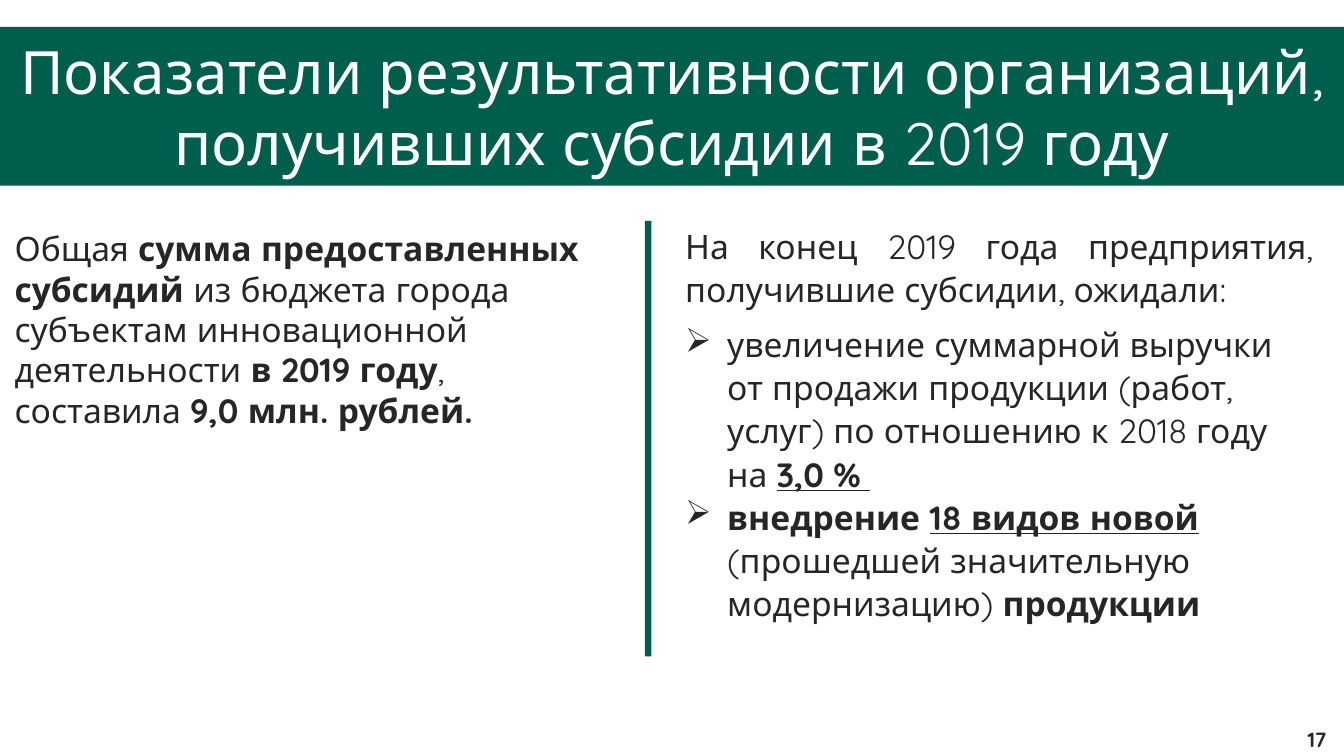
from pptx import Presentation
from pptx.dml.color import RGBColor
from pptx.enum.shapes import MSO_SHAPE
from pptx.enum.text import MSO_ANCHOR, PP_ALIGN
from pptx.oxml.ns import qn
from pptx.util import Pt
from lxml import etree

GREEN = RGBColor(0x00, 0x5E, 0x4C)
WHITE = RGBColor(0xFF, 0xFF, 0xFF)
DARK = RGBColor(0x26, 0x26, 0x26)
FONT = "Quicksand"
RECTANGLE = MSO_SHAPE.RECTANGLE
MIDDLE = MSO_ANCHOR.MIDDLE
LEFT, CENTER, JUSTIFY = PP_ALIGN.LEFT, PP_ALIGN.CENTER, PP_ALIGN.JUSTIFY
BULLET = "➢"
BULLET_INDENT = Pt(22.5)


def add_bar(page, left, top, width, height):
    bar = page.shapes.add_shape(RECTANGLE, Pt(left), Pt(top), Pt(width), Pt(height))
    bar.shadow.inherit = False
    bar.fill.solid()
    bar.fill.fore_color.rgb = GREEN
    bar.line.fill.background()
    return bar


def add_box(page, left, top, width, height, wrap=True):
    box = page.shapes.add_textbox(Pt(left), Pt(top), Pt(width), Pt(height))
    box.text_frame.word_wrap = wrap
    return box.text_frame


def add_span(para, text, size=18, color=DARK, bold=False, underline=False):
    span = para.add_run()
    span.text = text
    font = span.font
    font.name, font.size, font.color.rgb = FONT, Pt(size), color
    font.bold, font.underline = bold, underline


def format_para(para, align=LEFT, spacing=None, after=None):
    para.alignment = align
    para.line_spacing = spacing
    if after is not None:
        para.space_after = Pt(after)
    return para


def add_bullet(para):
    properties = para._p.get_or_add_pPr()
    properties.set("marL", str(BULLET_INDENT))
    properties.set("indent", str(-BULLET_INDENT))
    etree.SubElement(properties, qn("a:buChar")).set("char", BULLET)


def main():
    deck = Presentation()
    deck.slide_width, deck.slide_height = Pt(720), Pt(405)
    page = deck.slides.add_slide(deck.slide_layouts[6])

    # Title band
    band = add_bar(page, 0, 14.4, 720, 85).text_frame
    band.word_wrap = True
    band.vertical_anchor = MIDDLE
    title = format_para(band.paragraphs[0], align=CENTER)
    add_span(title, "Показатели результативности организаций, получивших субсидии в 2019 году",
             size=32, color=WHITE)

    # Left column: total of the subsidies
    total = add_box(page, 0.7, 118.8, 324.7, 116.6).paragraphs[0]
    for text, bold in (
        ("Общая ", False),
        ("сумма предоставленных субсидий ", True),
        ("из бюджета города субъектам инновационной деятельности ", False),
        ("в 2019 году", True),
        (", составила ", False),
        ("9,0 млн. рублей.", True),
    ):
        add_span(total, text, bold=bold)

    # Right column: expected results
    results = add_box(page, 360, 115.9, 350.6, 224)
    intro = format_para(results.paragraphs[0], align=JUSTIFY, spacing=1.07, after=6.5)
    add_span(intro, "На конец 2019 года предприятия, получившие субсидии, ожидали:")
    expectations = (
        (("увеличение суммарной выручки от продажи продукции (работ, услуг) "
          "по отношению к 2018 году на ", False, False),
         ("3,0 % ", True, True)),
        (("внедрение ", True, False),
         ("18 видов новой ", True, True),
         ("(прошедшей значительную модернизацию) ", False, False),
         ("продукции", True, False)),
    )
    for spans in expectations:
        para = format_para(results.add_paragraph(), spacing=1.07)
        add_bullet(para)
        for text, bold, underline in spans:
            add_span(para, text, bold=bold, underline=underline)

    # Divider between the columns
    add_bar(page, 345.4, 118.4, 3.6, 233.3)

    # Page number
    number = add_box(page, 693.4, 385.9, 26.6, 20.6, wrap=False).paragraphs[0]
    add_span(number, "17", size=11, bold=True)

    deck.save("out.pptx")


if __name__ == "__main__":
    main()
